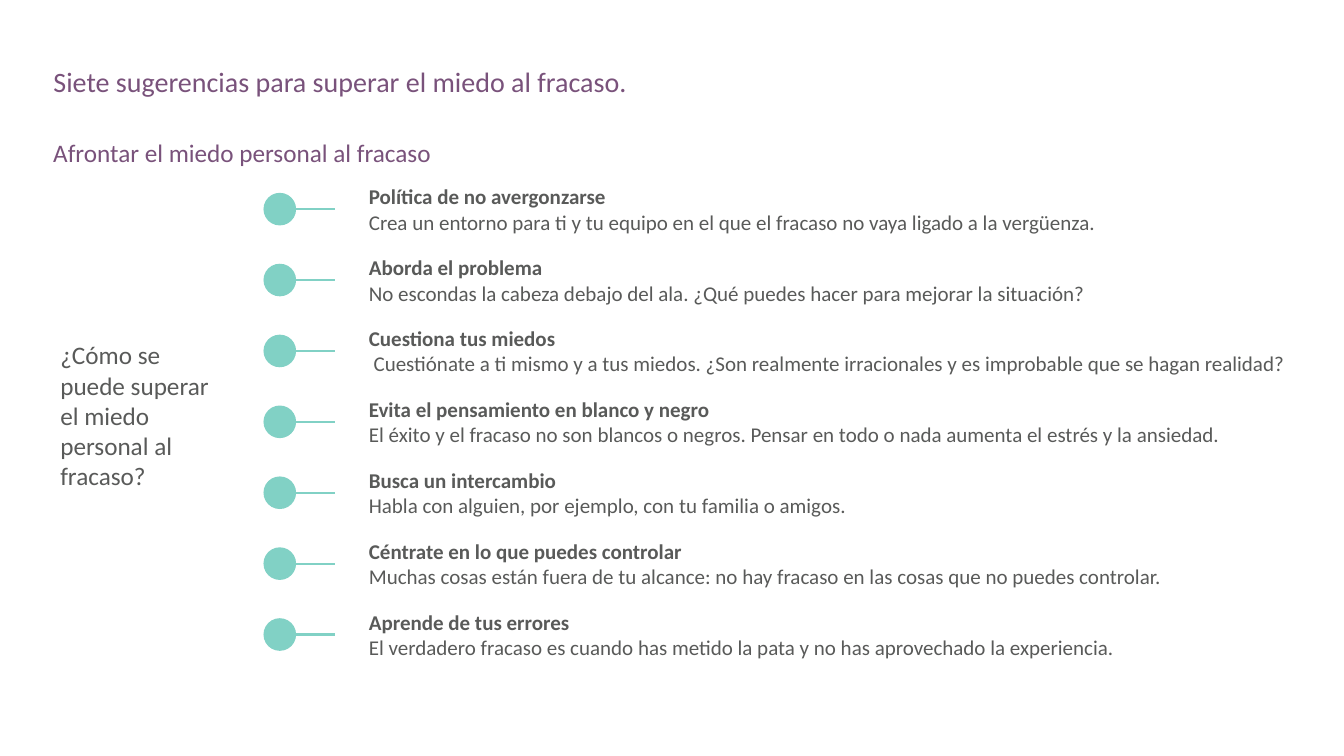
from lxml import etree
from pptx import Presentation
from pptx.dml.color import RGBColor
from pptx.enum import shapes, text
from pptx.oxml.ns import qn
from pptx.util import Inches, Pt

PURPLE = RGBColor(0x79, 0x52, 0x7B)
GRAY = RGBColor(0x59, 0x5A, 0x59)
TEAL = RGBColor(0x81, 0xD1, 0xC5)
FONT = "Calibri"

FIRST_TOP = 1.64
PITCH = 4.22 / 6
TIP_HEIGHT = 0.87
DOT = 0.31
DOT_LEFT = 2.62
LINE_END = 3.32

TIPS = [
    ("Política de no avergonzarse",
     "Crea un entorno para ti y tu equipo en el que el fracaso no vaya ligado a la vergüenza."),
    ("Aborda el problema",
     "No escondas la cabeza debajo del ala. ¿Qué puedes hacer para mejorar la situación?"),
    ("Cuestiona tus miedos",
     " Cuestiónate a ti mismo y a tus miedos. ¿Son realmente irracionales y es improbable "
     "que se hagan realidad?"),
    ("Evita el pensamiento en blanco y negro",
     "El éxito y el fracaso no son blancos o negros. Pensar en todo o nada aumenta el estrés "
     "y la ansiedad."),
    ("Busca un intercambio",
     "Habla con alguien, por ejemplo, con tu familia o amigos."),
    ("Céntrate en lo que puedes controlar",
     "Muchas cosas están fuera de tu alcance: no hay fracaso en las cosas que no puedes "
     "controlar."),
    ("Aprende de tus errores",
     "El verdadero fracaso es cuando has metido la pata y no has aprovechado la experiencia."),
]


def format_paragraph(paragraph, size, color, bold=False):
    paragraph.alignment = text.PP_ALIGN.LEFT
    for run in paragraph.runs:
        run.font.name = FONT
        run.font.size = Pt(size)
        run.font.color.rgb = color
        run.font.bold = bold


def fill_frame(frame, content, size, color, anchor=text.MSO_ANCHOR.TOP):
    frame.text = content
    frame.word_wrap = True
    frame.auto_size = text.MSO_AUTO_SIZE.NONE
    frame.vertical_anchor = anchor
    for paragraph in frame.paragraphs:
        format_paragraph(paragraph, size, color)


def add_text(slide, left, top, width, height, *style):
    box = slide.shapes.add_textbox(Inches(left), Inches(top), Inches(width), Inches(height))
    fill_frame(box.text_frame, *style)
    return box.text_frame


def add_title(slide, content):
    title = slide.shapes.title
    title.left, title.top = Inches(0.43), Inches(0.63)
    title.width, title.height = Inches(12.54), Inches(0.64)
    fill_frame(title.text_frame, content, 20, PURPLE)
    title.text_frame.paragraphs[0].line_spacing = 0.9


def add_marker(slide, top):
    """Draw the dot and the short line that points to a tip."""
    dot = slide.shapes.add_shape(shapes.MSO_SHAPE.OVAL, Inches(DOT_LEFT), Inches(top),
                                 Inches(DOT), Inches(DOT))
    dot.shadow.inherit = False
    dot.fill.solid()
    dot.fill.fore_color.rgb = TEAL
    dot.line.color.rgb = TEAL
    dot.line.width = Pt(1)

    middle = Inches(top + DOT / 2)
    pointer = slide.shapes.add_connector(shapes.MSO_CONNECTOR.STRAIGHT, Inches(DOT_LEFT + DOT),
                                         middle, Inches(LINE_END), middle)
    pointer.line.color.rgb = TEAL
    pointer.line.width = Pt(1.5)
    etree.SubElement(pointer._element.spPr, qn("a:effectLst"))


def add_tip(slide, top, heading, advice):
    frame = add_text(slide, 3.56, top, 10.12, TIP_HEIGHT, f"{heading}\n{advice}", 15, GRAY,
                     text.MSO_ANCHOR.MIDDLE)
    format_paragraph(frame.paragraphs[0], 15, GRAY, bold=True)
    add_marker(slide, top + (TIP_HEIGHT - DOT) / 2)


def main():
    deck = Presentation()
    deck.slide_width, deck.slide_height = Inches(13.33), Inches(7.5)
    slide = deck.slides.add_slide(deck.slide_layouts[5])

    add_title(slide, "Siete sugerencias para superar el miedo al fracaso.")
    subtitle = add_text(slide, 0.43, 1.35, 12.54, 0.33,
                        "Afrontar el miedo personal al fracaso", 18, PURPLE)
    subtitle.paragraphs[0].line_spacing = 0.9

    for row, (heading, advice) in enumerate(TIPS):
        add_tip(slide, FIRST_TOP + row * PITCH, heading, advice)

    question = add_text(slide, 0.5, 3.32, 1.7, 1.31,
                        "¿Cómo se puede superar el miedo personal al fracaso?", 18, GRAY)
    question.auto_size = text.MSO_AUTO_SIZE.SHAPE_TO_FIT_TEXT

    deck.save("out.pptx")


if __name__ == "__main__":
    main()
